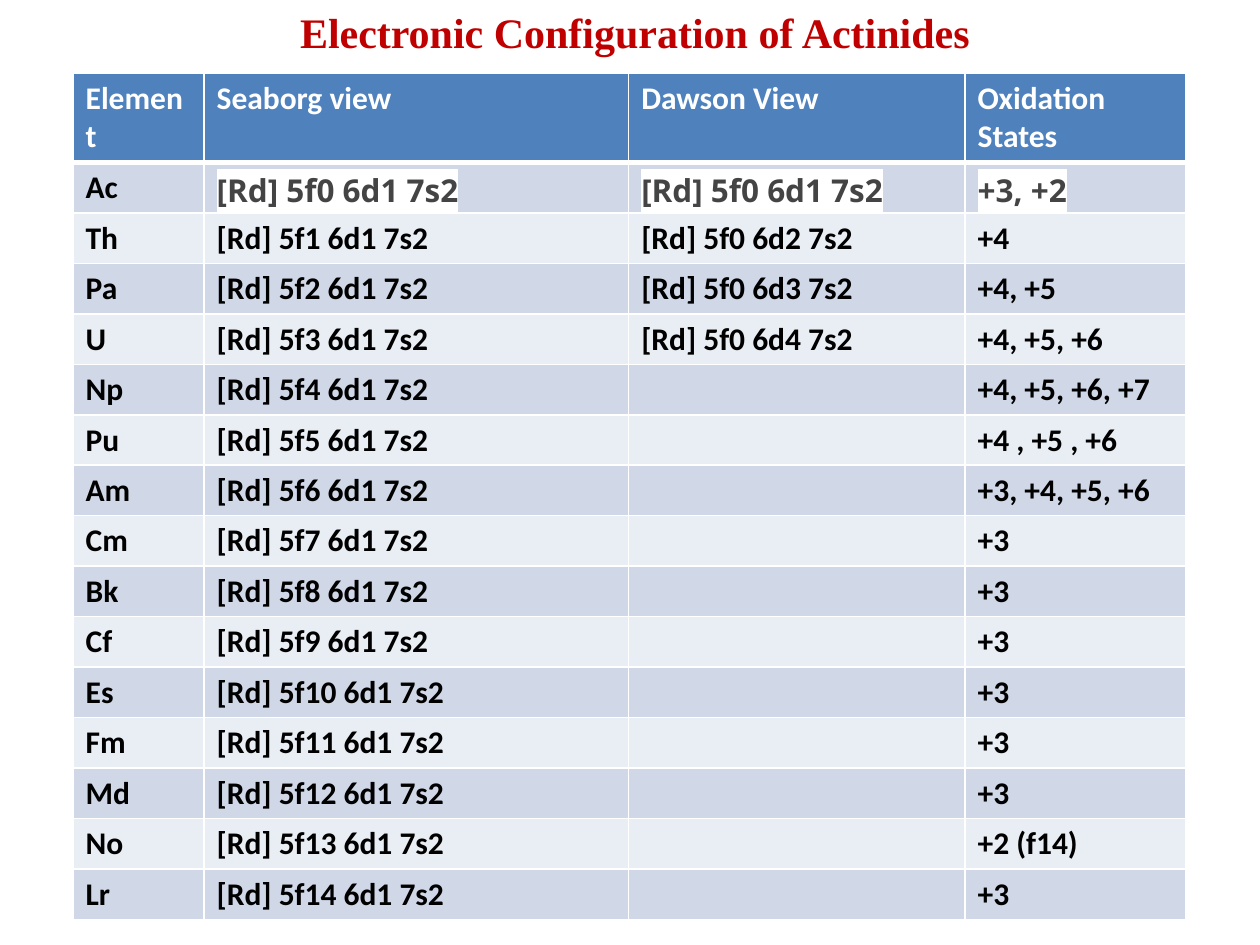
from dataclasses import dataclass

from lxml.etree import SubElement
from pptx import Presentation
from pptx.dml.color import RGBColor
from pptx.enum.text import MSO_ANCHOR, MSO_AUTO_SIZE, PP_ALIGN
from pptx.oxml.ns import qn
from pptx.util import Inches, Pt


@dataclass(frozen=True)
class Theme:
    title_font: str = "Times New Roman"
    body_font: str = "Calibri"
    accent_font: str = "Open Sans"
    title_size: int = 24
    body_size: int = 18
    title: str = "C00000"
    header: str = "4F81BD"
    bands: tuple[str, str] = ("D0D8E8", "E9EDF4")
    white: str = "FFFFFF"
    black: str = "000000"
    grey: str = "444444"


@dataclass(frozen=True)
class Actinide:
    symbol: str
    states: str
    dawson: str = ""


@dataclass(frozen=True)
class CellStyle:
    fill: str
    color: str
    font: str
    highlight: str = ""
    bottom: int = 1


THEME = Theme()
HEADERS = ("Element", "Seaborg view", "Dawson View", "Oxidation States")
COL_WIDTHS = (1.04, 3.37, 2.67, 1.75)
HEADER_HEIGHT, ROW_HEIGHT = 0.71, 0.4
ACTINIDES = (
    Actinide("Ac", "+3, +2", "[Rd] 5f0 6d1 7s2"),
    Actinide("Th", "+4", "[Rd] 5f0 6d2 7s2"),
    Actinide("Pa", "+4, +5", "[Rd] 5f0 6d3 7s2"),
    Actinide("U", "+4, +5, +6", "[Rd] 5f0 6d4 7s2"),
    Actinide("Np", "+4, +5, +6, +7"),
    Actinide("Pu", "+4 , +5 , +6"),
    Actinide("Am", "+3, +4, +5, +6"),
    Actinide("Cm", "+3"),
    Actinide("Bk", "+3"),
    Actinide("Cf", "+3"),
    Actinide("Es", "+3"),
    Actinide("Fm", "+3"),
    Actinide("Md", "+3"),
    Actinide("No", "+2 (f14)"),
    Actinide("Lr", "+3"),
)


def add_color(parent, tag: str, color: str):
    """Append a DrawingML element that holds one RGB colour."""
    el = SubElement(parent, qn(tag))
    SubElement(el, qn("a:srgbClr")).set("val", color)
    return el


def format_run(r, font: str, size: int, color: str, highlight: str = "") -> None:
    r.font.name, r.font.size, r.font.bold = font, Pt(size), True
    r.font.color.rgb = RGBColor.from_string(color)
    if highlight:
        rPr = r.font._element
        mark = add_color(rPr, "a:highlight", highlight)
        rPr.find(qn("a:solidFill")).addnext(mark)


def set_borders(cell, color: str, bottom: int) -> None:
    tcPr = cell._tc.get_or_add_tcPr()
    for side, width in (("L", 1), ("R", 1), ("T", 1), ("B", bottom)):
        ln = SubElement(tcPr, qn(f"a:ln{side}"))
        ln.set("w", str(Pt(width)))
        add_color(ln, "a:solidFill", color)


def set_cell(cell, text: str, style: CellStyle) -> None:
    set_borders(cell, THEME.white, style.bottom)
    cell.fill.solid()
    cell.fill.fore_color.rgb = RGBColor.from_string(style.fill)
    if text:
        cell.text_frame.text = text
        r = cell.text_frame.paragraphs[0].runs[0]
        format_run(r, style.font, THEME.body_size, style.color, style.highlight)


def add_title(s, text: str) -> None:
    sp = s.shapes.title
    sp.left, sp.top = Inches(0.58), Inches(-0.08)
    sp.width, sp.height = Inches(8.92), Inches(0.54)
    tf = sp.text_frame
    tf.text = text
    tf.word_wrap = True
    tf.auto_size = MSO_AUTO_SIZE.SHAPE_TO_FIT_TEXT
    tf.vertical_anchor = MSO_ANCHOR.TOP
    p = tf.paragraphs[0]
    p.alignment = PP_ALIGN.CENTER
    p.line_spacing, p.space_before, p.space_after = 1.2, Pt(0), Pt(8)
    format_run(p.runs[0], THEME.title_font, THEME.title_size, THEME.title)


def add_actinide_table(s, actinides: tuple[Actinide, ...]) -> None:
    height = HEADER_HEIGHT + ROW_HEIGHT * len(actinides)
    table = s.shapes.add_table(
        len(actinides) + 1, len(HEADERS), Inches(0.58), Inches(0.58),
        Inches(sum(COL_WIDTHS)), Inches(height)).table
    for col, width in zip(table.columns, COL_WIDTHS):
        col.width = Inches(width)
    for i, row in enumerate(table.rows):
        row.height = Inches(ROW_HEIGHT if i else HEADER_HEIGHT)

    # Header row
    head = CellStyle(THEME.header, THEME.white, THEME.body_font, bottom=3)
    for cell, text in zip(table.rows[0].cells, HEADERS):
        set_cell(cell, text, head)

    # Each element adds one 5f electron; the first row's values are highlighted
    for n, item in enumerate(actinides):
        fill = THEME.bands[n % 2]
        plain = CellStyle(fill, THEME.black, THEME.body_font)
        marked = CellStyle(fill, THEME.grey, THEME.accent_font, THEME.white)
        values = (item.symbol, f"[Rd] 5f{n} 6d1 7s2", item.dawson, item.states)
        for col, text in enumerate(values):
            style = marked if n == 0 and col > 0 else plain
            set_cell(table.cell(n + 1, col), text, style)


def main() -> None:
    prs = Presentation()
    prs.slide_width, prs.slide_height = Inches(10), Inches(7.5)
    s = prs.slides.add_slide(prs.slide_layouts[5])
    add_title(s, "Electronic Configuration of Actinides")
    add_actinide_table(s, ACTINIDES)
    prs.save("out.pptx")


if __name__ == "__main__":
    main()
